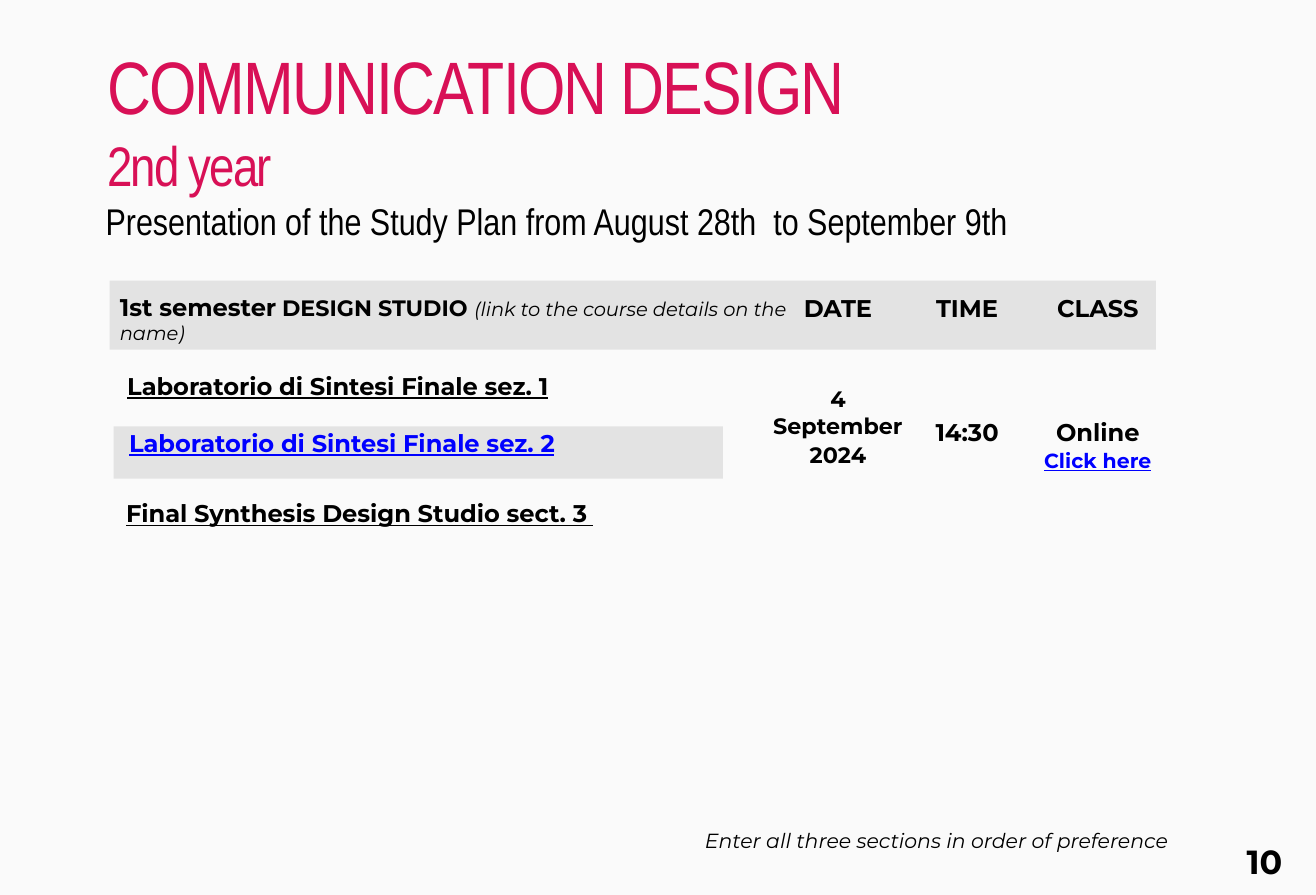
from pptx import Presentation
from pptx.dml.color import RGBColor
from pptx.enum.shapes import MSO_SHAPE
from pptx.enum.text import MSO_ANCHOR, MSO_AUTO_SIZE, PP_ALIGN
from pptx.util import Emu, Pt

RECT = MSO_SHAPE.RECTANGLE
TOP, MIDDLE = MSO_ANCHOR.TOP, MSO_ANCHOR.MIDDLE
FIXED = MSO_AUTO_SIZE.NONE
LEFT, CENTER, RIGHT = PP_ALIGN.LEFT, PP_ALIGN.CENTER, PP_ALIGN.RIGHT

SCALE = 1270
SIZE = (7090, 4820)
INDENT = 9
NARROW, SANS = "Arial Narrow", "Montserrat"
PAPER, GREY, BLACK, PINK, BLUE = "FAFAFA", "E3E3E3", "000000", "D81056", "0000FF"

TITLE_BOX = (569, 211, 5839, 1102)
TITLE = [
    (1, [("COMMUNICATION DESIGN", 40, "", PINK, -100)]),
    (1, [
        ("2nd year", 30, "n", PINK, -100),
        ("Presentation of the Study Plan from August 28th  to September 9th", 20, "", BLACK, 0),
    ]),
]
BANDS = [(591, 1512, 5637, 372), (612, 2297, 3283, 281)]
HEADER = [(1, [
    ("1st semester", 13, "b", BLACK, 0),
    (" ", 12, "i", BLACK, 0),
    ("DESIGN STUDIO ", 12, "b", BLACK, 0),
    ("(link to the course details on the name)", 10.5, "i", BLACK, 0),
])]
COURSES = [
    (685, 2000, "Laboratorio di Sintesi Finale sez. 1", BLACK),
    (695, 2308, "Laboratorio di Sintesi Finale sez. 2", BLUE),
    (679, 2686, "Final Synthesis Design Studio sect. 3 ", BLACK),
]
COLUMNS = [
    (4140, 749, "DATE", [
        (34, [("4 September", 12, "b", BLACK, 0)]),
        (1, [("2024", 12, "b", BLACK, 0)]),
    ]),
    (4836, 749, "TIME", [(51, [("14:30", 13, "b", BLACK, 0)])]),
    (5576, 677, "CLASS", [
        (51, [("Online", 13, "b", BLACK, 0)]),
        (1, [("Click here", 11, "bu", BLUE, 0)]),
    ]),
]
NOTE = [(1, [("Enter all three sections in order of preference", 11, "i", BLACK, 0)])]
NUMBER = [(2, [("10", 18, "b", BLACK, 0)])]


def color(code):
    return RGBColor.from_string(code)


def px(box):
    return [Emu(n * SCALE) for n in box]


def write(frame, lines, font, align=LEFT, anchor=TOP, indent=0):
    frame.word_wrap = True
    frame.auto_size = FIXED
    frame.vertical_anchor = anchor
    frame.margin_left = frame.margin_right = 0
    frame.margin_top = frame.margin_bottom = 0
    for i, (gap, runs) in enumerate(lines):
        para = frame.add_paragraph() if i else frame.paragraphs[0]
        para.alignment = align
        para.space_before = Pt(gap)
        if indent:
            para._p.get_or_add_pPr().set("indent", str(indent * SCALE))
        for text, size, style, ink, track in runs:
            run = para.add_run()
            run.text = text
            run.font.name = font
            run.font.size = Pt(size)
            run.font.bold = "b" in style
            run.font.italic = "i" in style
            run.font.underline = "u" in style
            run.font.color.rgb = color(ink)
            if track:
                run._r.get_or_add_rPr().set("spc", str(track))
            if "n" in style:
                para.add_line_break()


def add_text(slide, box, lines, align=LEFT):
    write(slide.shapes.add_textbox(*px(box)).text_frame, lines, SANS, align)


def add_band(slide, box):
    band = slide.shapes.add_shape(RECT, *px(box))
    band.shadow.inherit = False
    band.fill.solid()
    band.fill.fore_color.rgb = color(GREY)
    band.line.fill.background()


def main():
    deck = Presentation()
    deck.slide_width, deck.slide_height = px(SIZE)
    slide = deck.slides.add_slide(deck.slide_layouts[5])
    slide.background.fill.solid()
    slide.background.fill.fore_color.rgb = color(PAPER)

    title = slide.shapes.title
    title.left, title.top, title.width, title.height = px(TITLE_BOX)
    write(title.text_frame, TITLE, NARROW, anchor=MIDDLE, indent=INDENT)

    for box in BANDS:
        add_band(slide, box)
    add_text(slide, (646, 1574, 3665, 288), HEADER)
    for left, top, name, ink in COURSES:
        add_text(slide, (left, top, 2722, 166), [(1, [(name, 13, "bu", ink, 0)])])
    for left, width, head, lines in COLUMNS:
        first = (1, [(head, 13, "b", BLACK, 0)])
        add_text(slide, (left, 1580, width, 1300), [first] + lines, CENTER)
    add_text(slide, (2395, 4460, 3902, 137), NOTE, RIGHT)
    add_text(slide, (6716, 4532, 274, 216), NUMBER)
    deck.save("out.pptx")


if __name__ == "__main__":
    main()
